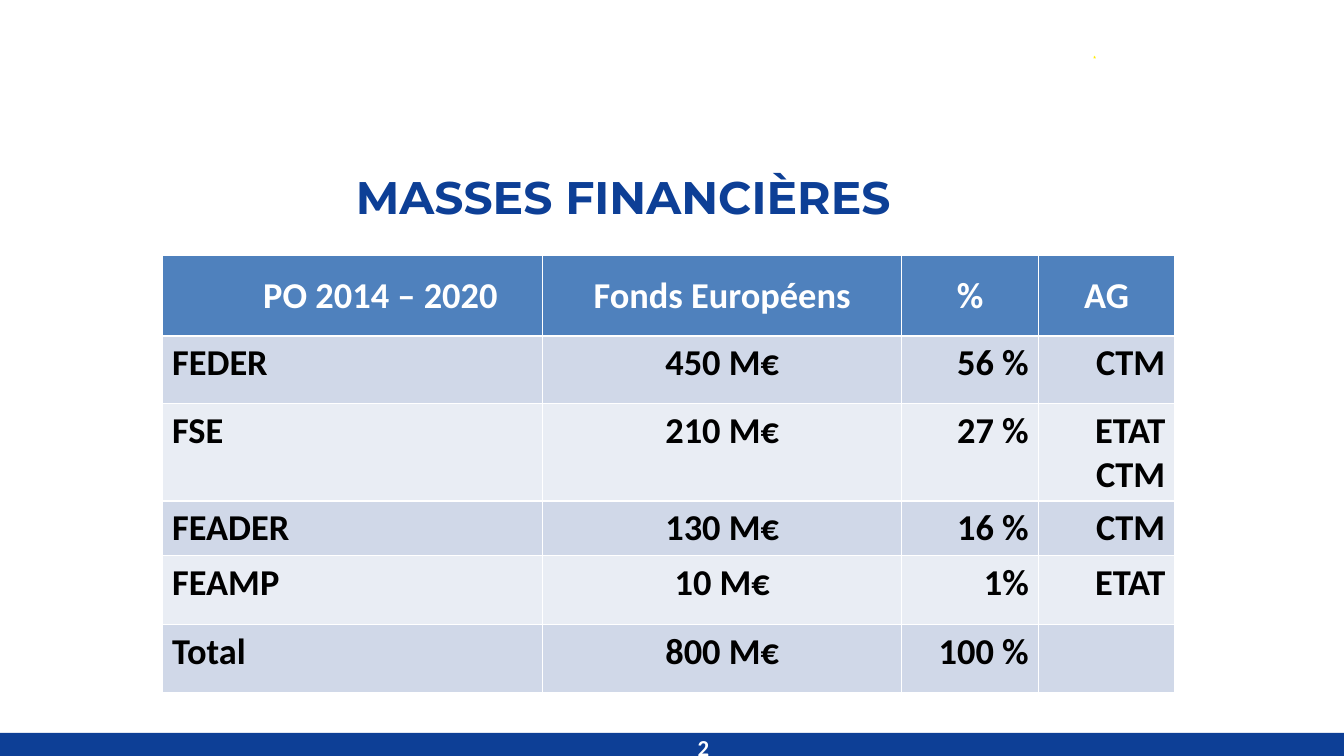
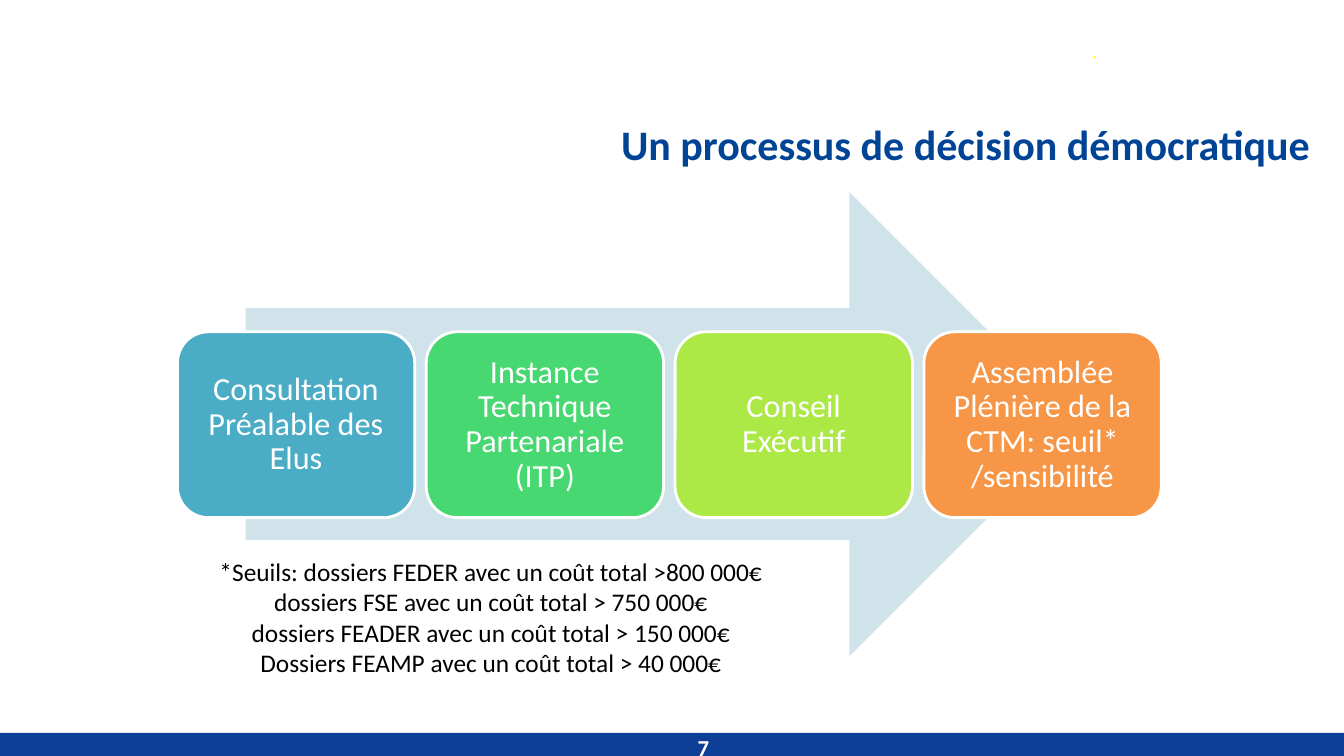
import pptx
import pptx.util
import pptx.dml.color
import pptx.enum.shapes
import pptx.enum.text
import pptx.oxml.ns
import lxml.etree

PX = 9525
NAVY, WHITE, BLACK = "0D3F96", "FFFFFF", "000000"
SHAPE = pptx.enum.shapes.MSO_SHAPE
ALIGN = pptx.enum.text.PP_ALIGN
MIDDLE = pptx.enum.text.MSO_ANCHOR.MIDDLE


def paint(fill, colour):
    fill.solid()
    fill.fore_color.rgb = pptx.dml.color.RGBColor.from_string(colour)


def write(frame, text, size, colour, align=ALIGN.LEFT, bold=False, font="Calibri"):
    frame.text = text
    for para in frame.paragraphs:
        para.alignment = align
        for span in para.runs:
            span.font.name = font
            span.font.size = pptx.util.Pt(size)
            span.font.bold = bold
            paint(span.font.fill, colour)


deck = pptx.Presentation()
deck.slide_width = 1280 * PX
deck.slide_height = 720 * PX

for number in ("2", "7"):
    page = deck.slides.add_slide(deck.slide_layouts[6])
    for kind, left, top, width, height, colour in (
        (SHAPE.RECTANGLE, 0, 698, 1280, 22, NAVY),
        (SHAPE.STAR_5_POINT, 1041, 53, 3, 3, "FFED00"),
    ):
        mark = page.shapes.add_shape(kind, left * PX, top * PX, width * PX, height * PX)
        mark.shadow.inherit = False
        mark.line.fill.background()
        paint(mark.fill, colour)
    footer = page.shapes.add_textbox(397 * PX, 693 * PX, 288 * PX, 38 * PX)
    footer.text_frame.word_wrap = True
    footer.text_frame.vertical_anchor = MIDDLE
    write(footer.text_frame, number, 16.3, WHITE, ALIGN.RIGHT, True)

funds_page, process_page = deck.slides

title = funds_page.shapes.add_textbox(339 * PX, 182 * PX, 571 * PX, 30 * PX)
frame = title.text_frame
frame.word_wrap = True
frame.margin_left = frame.margin_top = frame.margin_right = frame.margin_bottom = 0
write(frame, "MASSES FINANCIÈRES", 32.6, NAVY, bold=True, font="Montserrat")
frame.paragraphs[0].line_spacing = pptx.util.Pt(23.6)

rows = (
    ("PO 2014 – 2020", "Fonds Européens", "%", "AG"),
    ("FEDER", "450 M€", "56 %", "CTM"),
    ("FSE", "210 M€", "27 %", "ETAT\nCTM"),
    ("FEADER", "130 M€", "16 %", "CTM"),
    ("FEAMP", "10 M€", "1%", "ETAT"),
    ("Total", "800 M€", "100 %", ""),
)
column_widths = (362, 342, 130, 130)
row_heights = (77, 64, 49, 49, 66, 65)
column_aligns = (ALIGN.LEFT, ALIGN.CENTER, ALIGN.RIGHT, ALIGN.RIGHT)
table = funds_page.shapes.add_table(
    len(rows), len(column_widths), 155 * PX, 243 * PX,
    sum(column_widths) * PX, sum(row_heights) * PX,
).table
for column, width in zip(table.columns, column_widths):
    column.width = width * PX
for row, height in zip(table.rows, row_heights):
    row.height = height * PX

for row_index, texts in enumerate(rows):
    header = row_index == 0
    band = "4F81BD" if header else ("E9EDF4", "D0D8E8")[row_index % 2]
    for column_index, text in enumerate(texts):
        cell = table.cell(row_index, column_index)
        cell.margin_left = cell.margin_right = 9 * PX
        cell.margin_top = cell.margin_bottom = 5 * PX
        properties = cell._tc.get_or_add_tcPr()
        for side in ("lnL", "lnR", "lnT", "lnB"):
            border = lxml.etree.SubElement(properties, pptx.oxml.ns.qn("a:" + side), w="12700")
            solid = lxml.etree.SubElement(border, pptx.oxml.ns.qn("a:solidFill"))
            lxml.etree.SubElement(solid, pptx.oxml.ns.qn("a:srgbClr"), val=WHITE)
        paint(cell.fill, band)
        if header:
            cell.vertical_anchor = MIDDLE
        align = ALIGN.CENTER if header else column_aligns[column_index]
        write(cell.text_frame, text, 26, WHITE if header else BLACK, align, True)
table.cell(0, 0).margin_left = 62 * PX

arrow = process_page.shapes.add_shape(
    SHAPE.RIGHT_ARROW, 234 * PX, 183 * PX, 796 * PX, 442 * PX)
arrow.shadow.inherit = False
arrow.line.fill.background()
paint(arrow.fill, "D0E3EA")

steps = (
    ("Consultation Préalable des Elus", "4BACC6"),
    ("Instance Technique Partenariale (ITP)", "47D872"),
    ("Conseil Exécutif", "ACE946"),
    ("Assemblée Plénière de la CTM: seuil* /sensibilité", "F79646"),
)
for index, (text, colour) in enumerate(steps):
    box = process_page.shapes.add_shape(
        SHAPE.ROUNDED_RECTANGLE, (169 + 237 * index) * PX, 316 * PX, 226 * PX, 177 * PX)
    box.shadow.inherit = False
    paint(box.fill, colour)
    paint(box.line.fill, WHITE)
    box.line.width = pptx.util.Pt(2)
    frame = box.text_frame
    frame.word_wrap = True
    frame.vertical_anchor = MIDDLE
    frame.margin_left = frame.margin_top = frame.margin_right = frame.margin_bottom = 10 * PX
    write(frame, text, 23, WHITE, ALIGN.CENTER)
    frame.paragraphs[0].line_spacing = 0.9

thresholds = process_page.shapes.add_shape(
    SHAPE.ROUNDED_RECTANGLE, 156 * PX, 532 * PX, 623 * PX, 111 * PX)
thresholds.shadow.inherit = False
thresholds.fill.background()
paint(thresholds.line.fill, WHITE)
thresholds.line.width = pptx.util.Pt(2)
thresholds.text_frame.word_wrap = True
thresholds.text_frame.vertical_anchor = MIDDLE
threshold_lines = (
    "*Seuils: dossiers FEDER avec un coût total >800 000€",
    "dossiers FSE avec un coût total > 750 000€",
    "dossiers FEADER avec un coût total > 150 000€",
    "Dossiers FEAMP avec un coût total > 40 000€",
)
write(thresholds.text_frame, "\n".join(threshold_lines), 18.1, BLACK, ALIGN.CENTER)

heading = process_page.shapes.add_textbox(582 * PX, 108 * PX, 683 * PX, 59 * PX)
heading.text_frame.word_wrap = False
heading.text_frame.auto_size = pptx.enum.text.MSO_AUTO_SIZE.SHAPE_TO_FIT_TEXT
write(heading.text_frame, "Un processus de décision démocratique", 30, "014495", bold=True)

deck.save("out.pptx")
